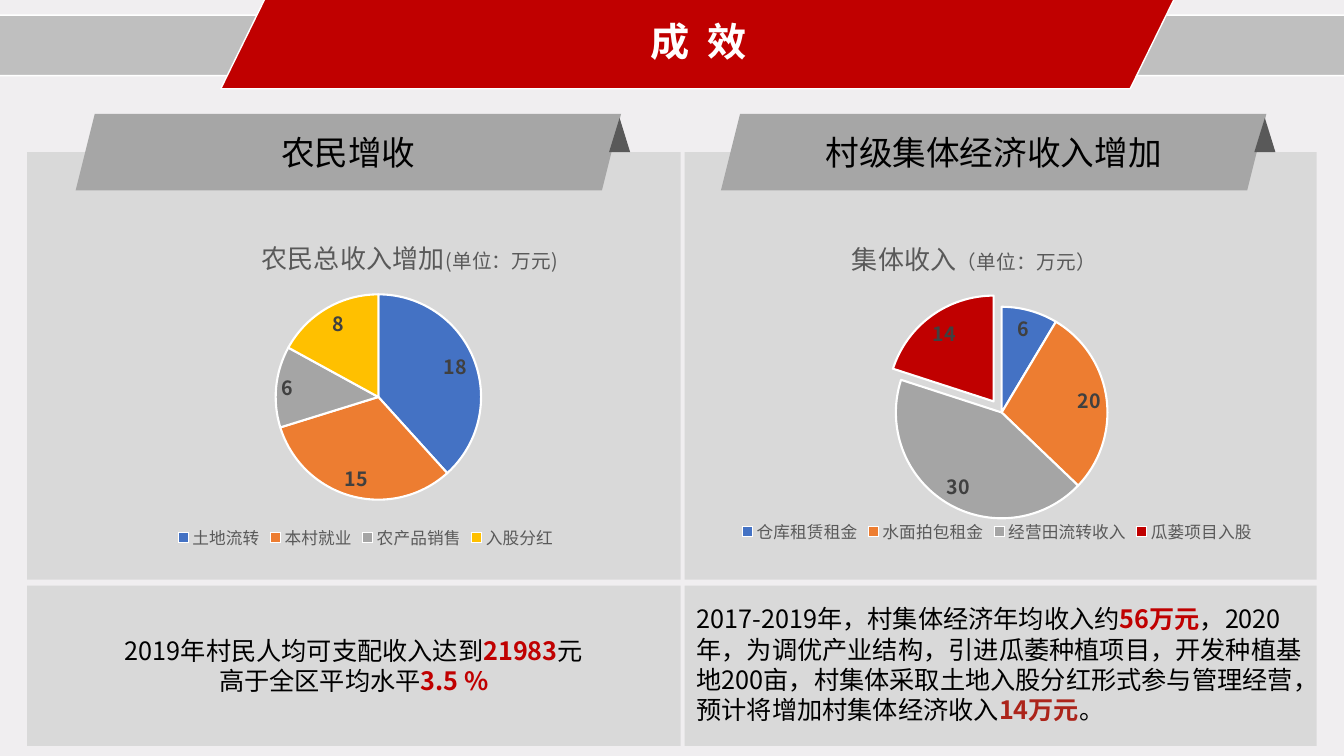
from lxml.etree import SubElement
from pptx import Presentation
from pptx.chart.data import CategoryChartData
from pptx.dml.color import RGBColor
from pptx.enum.chart import XL_CHART_TYPE, XL_LABEL_POSITION, XL_LEGEND_POSITION
from pptx.enum.shapes import MSO_SHAPE
from pptx.enum.text import MSO_ANCHOR, PP_ALIGN
from pptx.oxml import parse_xml
from pptx.oxml.ns import nsdecls, qn
from pptx.util import Inches, Pt

FONT = "Noto Sans CJK SC"
CHART_FONT = "Calibri"
BLACK = RGBColor(0, 0, 0)
WHITE = RGBColor(0xFF, 0xFF, 0xFF)
RED = RGBColor(0xC0, 0, 0)
BRICK = RGBColor(0xAC, 0x24, 0x1A)
BACKDROP = RGBColor(0xF0, 0xEE, 0xF0)
STRIPE = RGBColor(0xBF, 0xBF, 0xBF)
PANEL = RGBColor(0xD9, 0xD9, 0xD9)
RIBBON = RGBColor(0xA6, 0xA6, 0xA6)
FOLD = RGBColor(0x59, 0x59, 0x59)
LABEL = RGBColor(0x40, 0x40, 0x40)
BLUE = RGBColor(0x44, 0x72, 0xC4)
ORANGE = RGBColor(0xED, 0x7D, 0x31)
GREY = RGBColor(0xA5, 0xA5, 0xA5)
GOLD = RGBColor(0xFF, 0xC0, 0)

HEADING = "成  效"
FARMER_NOTE = [
    [("2019年村民人均可支配收入达到", None), ("21983", RED), ("元", None)],
    [("高于全区平均水平", None), ("3.5 %", RED)],
]
VILLAGE_NOTE = [[
    ("2017-2019年，村集体经济年均收入约", None), ("56万元", RED),
    ("，2020年，为调优产业结构，引进瓜萎种植项目，开发种植基地200亩，"
     "村集体采取土地入股分红形式参与管理经营，预计将增加村集体经济收入", None),
    ("14万元", BRICK), ("。", None),
]]
# Layouts are fractions of the chart: x, y and, for the pie, width, height.
COLUMNS = [
    {
        "ribbon": "农民增收", "panel": (0.27, 6.48), "ribbon_left": 0.75, "fold_left": 6.04,
        "chart_at": (0.81, 2.18, 5.66, 3.32), "title": ("农民总收入增加", "(单位：万元)"),
        "slices": [("土地流转", 18, BLUE), ("本村就业", 15, ORANGE),
                   ("农产品销售", 6, GREY), ("入股分红", 8, GOLD)],
        "exploded": None, "title_layout": (0.31, 0.04),
        "pie_layout": (0.34, 0.22, 0.36, 0.62), "legend_layout": (0.16, 0.9),
    },
    {
        "ribbon": "村级集体经济收入增加", "panel": (6.79, 6.27), "ribbon_left": 7.15, "fold_left": 12.44,
        "chart_at": (7.02, 2.03, 5.83, 3.62), "title": ("集体收入", "（单位：万元）"),
        "slices": [("仓库租赁租金", 6, BLUE), ("水面拍包租金", 20, ORANGE),
                   ("经营田流转收入", 30, GREY), ("瓜蒌项目入股", 14, RED)],
        "exploded": 3, "title_layout": (0.24, 0.08),
        "pie_layout": (0.32, 0.28, 0.36, 0.58), "legend_layout": (0.05, 0.85),
    },
]


def style(font, size, color, bold=False, name=FONT):
    font.size, font.bold, font.name = Pt(size), bold, name
    font.color.rgb = color


def add_block(slide, preset, at, fill, outlined=False):
    block = slide.shapes.add_shape(preset, *map(Inches, at))
    block.shadow.inherit = False
    block.fill.solid()
    block.fill.fore_color.rgb = fill
    if outlined:
        block.line.color.rgb = WHITE
        block.line.width = Pt(1)
    else:
        block.line.fill.background()
    return block


def write_line(block, text, size, color, bold=False):
    block.text_frame.vertical_anchor = MSO_ANCHOR.MIDDLE
    line = block.text_frame.paragraphs[0]
    line.text = text
    line.alignment = PP_ALIGN.CENTER
    style(line.font, size, color, bold)


def write_note(frame, lines, alignment):
    """Fill a frame with runs; a run that has a colour is bold."""
    frame.word_wrap = True
    for number, runs in enumerate(lines):
        line = frame.add_paragraph() if number else frame.paragraphs[0]
        line.alignment = alignment
        for text, accent in runs:
            run = line.add_run()
            run.text = text
            style(run.font, 18, accent or BLACK, accent is not None)


def place(element, index, layout):
    """Give a chart part a manual layout as its child at the index."""
    for old in element.findall(qn("c:layout")):
        element.remove(old)
    holder = parse_xml(f"<c:layout {nsdecls('c')}><c:manualLayout/></c:layout>")
    settings = [("xMode", "edge"), ("yMode", "edge")]
    settings += zip(("x", "y", "w", "h"), layout)
    if element.tag == qn("c:plotArea"):
        settings.insert(0, ("layoutTarget", "inner"))
    for tag, value in settings:
        SubElement(holder[0], qn(f"c:{tag}")).set("val", str(value))
    element.insert(index, holder)


def add_pie(slide, column):
    names, values, colors = zip(*column["slices"])
    data = CategoryChartData()
    data.categories = names
    data.add_series("Series 1", values)
    chart = slide.shapes.add_chart(
        XL_CHART_TYPE.PIE, *map(Inches, column["chart_at"]), data).chart
    style(chart.font, 10, BLACK, name=CHART_FONT)

    chart.has_title = True
    title = chart.chart_title
    title_line = title.text_frame.paragraphs[0]
    for text, size in zip(column["title"], (18.6, 14)):
        run = title_line.add_run()
        run.text = text
        style(run.font, size, FOLD)
    place(title._element, 1, column["title_layout"])

    chart.has_legend = True
    legend = chart.legend
    legend.position = XL_LEGEND_POSITION.BOTTOM
    legend.include_in_layout = False
    style(legend.font, 11.9, FOLD, name=CHART_FONT)
    place(legend._element, 1, column["legend_layout"])

    plot = chart.plots[0]
    plot.vary_by_categories = True
    place(chart._chartSpace.chart.plotArea, 0, column["pie_layout"])
    plot.has_data_labels = True
    labels = plot.data_labels
    labels.show_value = True
    labels.show_percentage = False
    labels.position = XL_LABEL_POSITION.BEST_FIT
    style(labels.font, 14, LABEL, True)

    series = plot.series[0]
    for number, color in enumerate(colors):
        slice_format = series.points[number].format
        slice_format.fill.solid()
        slice_format.fill.fore_color.rgb = color
        slice_format.line.color.rgb = WHITE
        slice_format.line.width = Pt(1.5)
    if column["exploded"] is not None:
        point = series._element.findall(qn("c:dPt"))[column["exploded"]]
        point.find(qn("c:spPr")).addprevious(
            parse_xml(f'<c:explosion {nsdecls("c")} val="13"/>'))


def main():
    deck = Presentation()
    deck.slide_width, deck.slide_height = Inches(13.33), Inches(7.5)
    slide = deck.slides.add_slide(deck.slide_layouts[6])
    slide.background.fill.solid()
    slide.background.fill.fore_color.rgb = BACKDROP

    slanted = MSO_SHAPE.PARALLELOGRAM
    stripe = add_block(slide, slanted, (-1, 0.15, 14.77, 0.6), STRIPE, True)
    banner = add_block(slide, slanted, (2.19, -0.06, 9.48, 0.94), RED, True)
    for band in (stripe, banner):
        band.adjustments[0] = 0.49
    write_line(banner, HEADING, 28, WHITE, True)

    note_panels = []
    for column in COLUMNS:
        left, width = column["panel"]
        add_block(slide, MSO_SHAPE.RECTANGLE, (left, 1.51, width, 4.24), PANEL)
        ribbon = add_block(slide, slanted, (column["ribbon_left"], 1.13, 5.41, 0.76), RIBBON)
        write_line(ribbon, column["ribbon"], 24, BLACK)
        add_block(slide, MSO_SHAPE.ISOSCELES_TRIANGLE,
                  (column["fold_left"], 1.17, 0.21, 0.34), FOLD)
        add_pie(slide, column)
        note_panels.append(
            add_block(slide, MSO_SHAPE.RECTANGLE, (left, 5.81, width, 1.59), PANEL))

    farmer_frame = note_panels[0].text_frame
    farmer_frame.vertical_anchor = MSO_ANCHOR.MIDDLE
    write_note(farmer_frame, FARMER_NOTE, PP_ALIGN.CENTER)
    village_box = slide.shapes.add_textbox(*map(Inches, (6.81, 5.94, 6.21, 1.31)))
    write_note(village_box.text_frame, VILLAGE_NOTE, PP_ALIGN.LEFT)
    deck.save("out.pptx")


if __name__ == "__main__":
    main()
